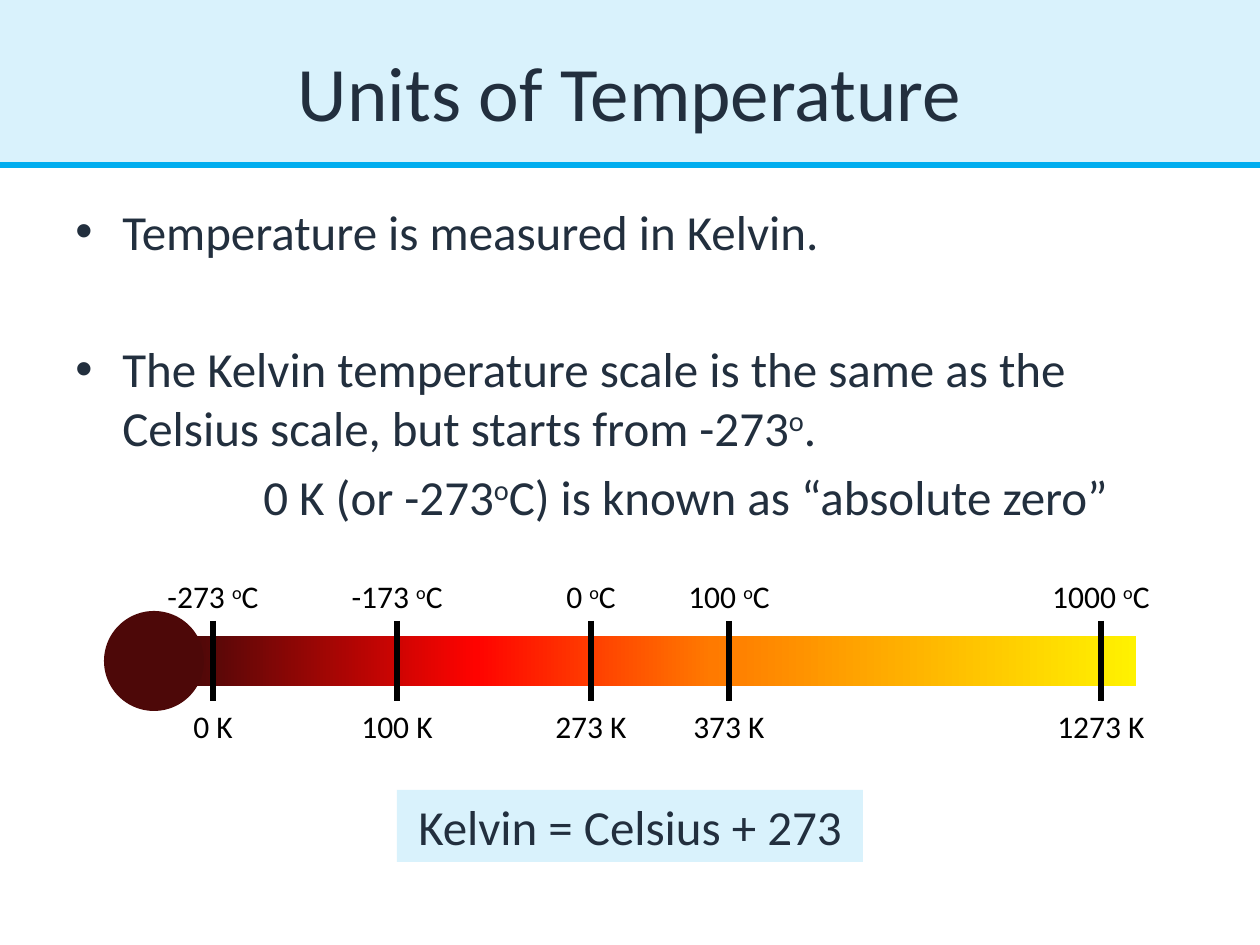
import lxml.etree
import pptx
import pptx.dml.color
import pptx.enum.shapes
import pptx.enum.text
import pptx.oxml.ns
import pptx.util

THEME = {
    "font": "Calibri",
    "ink": "222F3E",
    "black": "000000",
    "accent": "00ADEF",
    "bulb": "4D0808",
    "heat": [(0, "4D0808"), (30, "FF0300"), (55, "FF7A00"), (100, "FFF200")],
    "title": 44,
    "body": 28,
    "label": 18,
}
SCALE = pptx.util.Inches(1) / 126
SHAPE = pptx.enum.shapes.MSO_SHAPE
CENTER = pptx.enum.text.PP_ALIGN.CENTER
LEFT = pptx.enum.text.PP_ALIGN.LEFT
MIDDLE = pptx.enum.text.MSO_ANCHOR.MIDDLE
rgb = pptx.dml.color.RGBColor.from_string
qn = pptx.oxml.ns.qn


def px(*lengths):
    return [round(length * SCALE) for length in lengths]


def write(para, text, size, color, align=CENTER):
    para.alignment = align
    for index, piece in enumerate(text.split("^")):
        span = para.add_run()
        span.text = piece
        span.font.name = THEME["font"]
        span.font.size = pptx.util.Pt(THEME[size])
        span.font.color.rgb = rgb(THEME[color])
        if index % 2:
            span.font._element.set("baseline", "30000")


deck = pptx.Presentation()
deck.slide_width, deck.slide_height = px(1260, 945)
page = deck.slides.add_slide(deck.slide_layouts[6])

header = page.shapes.add_shape(SHAPE.RECTANGLE, *px(0, 0, 1260, 165))

title = page.shapes.add_textbox(*px(63, 16, 1134, 149))
title.text_frame.word_wrap = True
title.text_frame.vertical_anchor = MIDDLE
write(title.text_frame.paragraphs[0], "Units of Temperature", "title", "ink")

body = page.shapes.add_textbox(*px(63, 195, 1134, 624))
body.text_frame.word_wrap = True
points = [
    ("Temperature is measured in Kelvin.", 0, 47, True),
    ("The Kelvin temperature scale is the same as the Celsius scale, "
     "but starts from -273^o^.", 45, 47, True),
    ("0 K (or -273^o^C) is known as “absolute zero”", 5.6, 188, False),
]
for index, (text, space, margin, bulleted) in enumerate(points):
    frame = body.text_frame
    para = frame.add_paragraph() if index else frame.paragraphs[0]
    write(para, text, "body", "ink", LEFT)
    para.space_before = pptx.util.Pt(space)
    properties = para._p.get_or_add_pPr()
    indent = px(margin)[0]
    properties.set("marL", str(indent))
    if bulleted:
        properties.set("indent", str(-indent))
        lxml.etree.SubElement(properties, qn("a:buFont"), typeface="Arial")
        lxml.etree.SubElement(properties, qn("a:buChar"), char="•")

thermometer = page.shapes.add_group_shape()
tube = thermometer.shapes.add_shape(SHAPE.RECTANGLE, *px(193, 636, 943, 50))
tube.fill.gradient()
tube.fill.gradient_angle = 0
stops = tube._element.spPr.find(qn("a:gradFill")).find(qn("a:gsLst"))
for stop in list(stops):
    stops.remove(stop)
for percent, color in THEME["heat"]:
    stop = lxml.etree.SubElement(stops, qn("a:gs"), pos=str(percent * 1000))
    lxml.etree.SubElement(stop, qn("a:srgbClr"), val=color)
bulb = thermometer.shapes.add_shape(SHAPE.OVAL, *px(104, 611, 100, 100))
bulb.fill.solid()
bulb.fill.fore_color.rgb = rgb(THEME["bulb"])

marks = [
    (213, 118, "-273 ^o^C", "0 K"),
    (397, 118, "-173 ^o^C", "100 K"),
    (591, 120, "0 ^o^C", "273 K"),
    (729, 120, "100 ^o^C", "373 K"),
    (1101, 149, "1000 ^o^C", "1273 K"),
]
for center, width, celsius, kelvin in marks:
    for top, text in ((571, celsius), (701, kelvin)):
        label = page.shapes.add_textbox(*px(center - width / 2, top, width, 50))
        label.text_frame.word_wrap = False
        write(label.text_frame.paragraphs[0], text, "label", "black")

formula = page.shapes.add_shape(SHAPE.RECTANGLE, *px(397, 790, 466, 72))
formula.text_frame.vertical_anchor = MIDDLE
write(formula.text_frame.paragraphs[0], "Kelvin = Celsius + 273", "body", "ink")

for panel in (header, formula):
    panel.fill.solid()
    panel.fill.fore_color.rgb = rgb(THEME["accent"])
    tint = panel._element.spPr.find(qn("a:solidFill")).find(qn("a:srgbClr"))
    lxml.etree.SubElement(tint, qn("a:alpha"), val="15000")
for shape in (header, tube, bulb, formula):
    shape.line.fill.background()
    shape.shadow.inherit = False

rules = [(center, 621, center, 701, "black") for center, *labels in marks]
rules.append((0, 165, 1260, 165, "accent"))
for *ends, color in rules:
    rule = page.shapes.add_connector(
        pptx.enum.shapes.MSO_CONNECTOR.STRAIGHT, *px(*ends))
    rule.line.color.rgb = rgb(THEME[color])
    rule.line.width = pptx.util.Pt(3)
    lxml.etree.SubElement(rule._element.spPr, qn("a:effectLst"))

deck.save("out.pptx")
